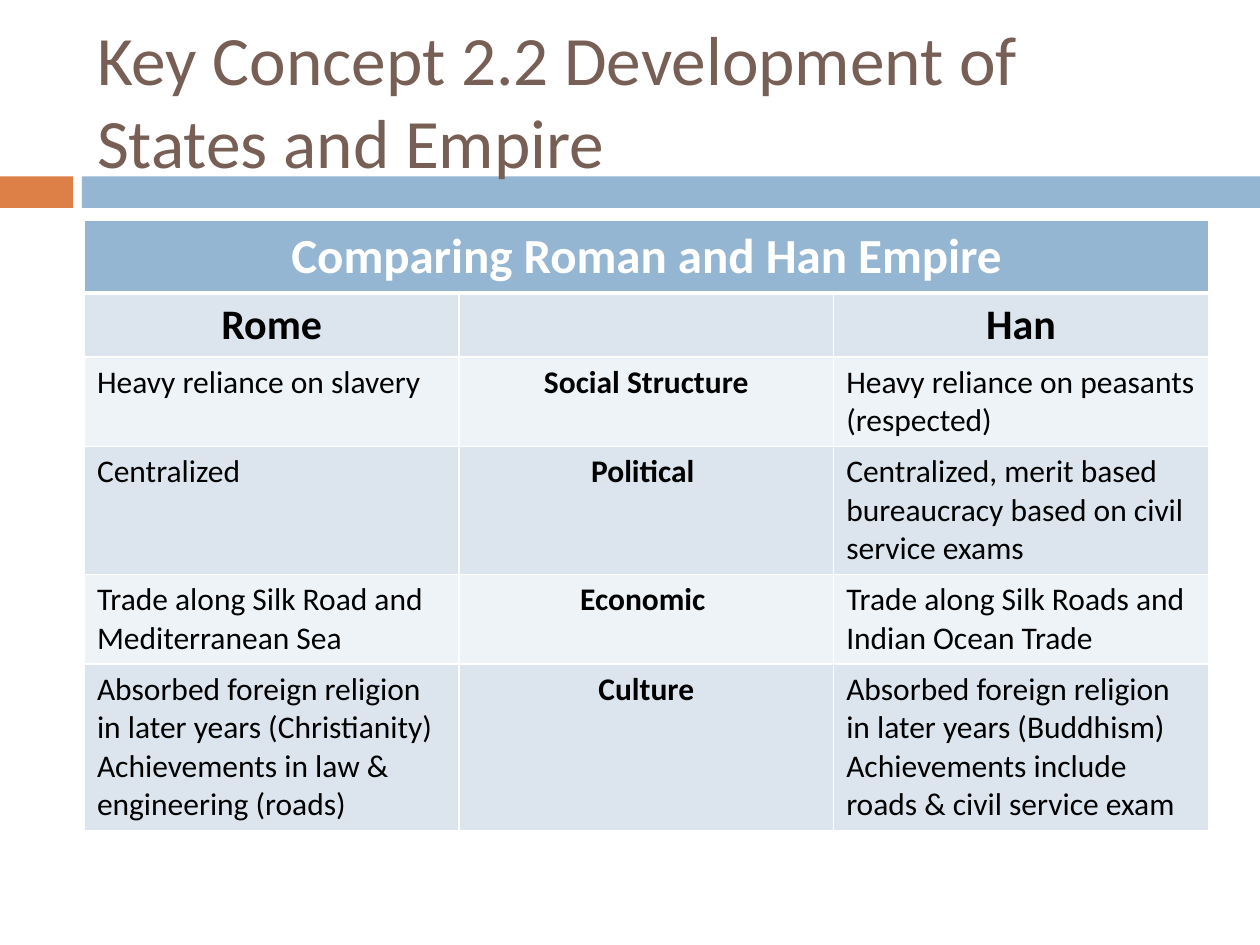
import pptx
import pptx.util
import pptx.dml.color
import pptx.enum.shapes
import pptx.enum.text
import pptx.oxml
import pptx.oxml.ns

Inches, Pt = pptx.util.Inches, pptx.util.Pt
ALIGN = pptx.enum.text.PP_ALIGN

COLORS = {
    "title": "775F55", "orange": "DD8047", "blue": "94B6D2", "white": "FFFFFF",
    "black": "000000", "dark band": "DCE5EE", "light band": "EEF3F7",
}
FONT = "Calibri"
TITLE = "Key Concept 2.2 Development of States and Empire"
BARS = [("orange", 0, 0.58), ("blue", 0.65, 9.35)]
ROWS = [
    ("Comparing Roman and Han Empire", "", ""),
    ("Rome", "", "Han"),
    ("Heavy reliance on slavery", "Social Structure",
     "Heavy reliance on peasants (respected)"),
    ("Centralized", "Political ",
     "Centralized, merit based bureaucracy based on civil service exams"),
    ("Trade along Silk Road and Mediterranean Sea", "Economic ",
     "Trade along Silk Roads and Indian Ocean Trade"),
    ("Absorbed foreign religion in later years (Christianity)\n"
     "Achievements in law & engineering (roads)", "Culture",
     "Absorbed foreign religion in later years (Buddhism)\n"
     "Achievements include roads & civil service exam"),
]
HEADING_SIZES = [28, 24]
BODY_SIZE = 18
LEFT, WIDTH, ROW_HEIGHT = 0.67, 8.92, 0.41


def rgb(name):
    return pptx.dml.color.RGBColor.from_string(COLORS[name])


def format_font(font, size, color, bold):
    font.name, font.size, font.bold = FONT, Pt(size), bold
    font.color.rgb = rgb(color)


def add_bar(slide, color, left, width):
    """Add a bar behind everything already on the slide."""
    bar = slide.shapes.add_shape(pptx.enum.shapes.MSO_SHAPE.RECTANGLE,
                                 Inches(left), Inches(1.4), Inches(width), Inches(0.25))
    bar.shadow.inherit = False
    bar.fill.solid()
    bar.fill.fore_color.rgb = rgb(color)
    bar.line.fill.background()
    slide.shapes._spTree.insert(2, bar._element)


def set_borders(cell, bottom_width):
    """Draw white cell borders; they must come before the fill in the XML."""
    properties = cell._tc.get_or_add_tcPr()
    widths = {"lnL": 1, "lnR": 1, "lnT": 1, "lnB": bottom_width}
    for index, (tag, width) in enumerate(widths.items()):
        properties.insert(index, pptx.oxml.parse_xml(
            f'<a:{tag} {pptx.oxml.ns.nsdecls("a")} w="{Pt(width)}"><a:solidFill>'
            f'<a:srgbClr val="{COLORS["white"]}"/></a:solidFill></a:{tag}>'))


def fill_cell(cell, text, row, column):
    is_heading = row < len(HEADING_SIZES)
    emphasized = is_heading or column == 1
    size = HEADING_SIZES[row] if is_heading else BODY_SIZE
    band = "blue" if row == 0 else "dark band" if row % 2 else "light band"
    cell.fill.solid()
    cell.fill.fore_color.rgb = rgb(band)
    set_borders(cell, 3 if row == 0 else 1)
    cell.text_frame.text = text
    for para in cell.text_frame.paragraphs:
        para.alignment = ALIGN.CENTER if emphasized else ALIGN.LEFT
        for span in para.runs:
            format_font(span.font, size, "white" if row == 0 else "black", emphasized)


def add_comparison(slide):
    frame = slide.shapes.add_table(len(ROWS), 3, Inches(LEFT), Inches(1.75),
                                   Inches(WIDTH), Inches(ROW_HEIGHT * len(ROWS)))
    table = frame.table
    for row, texts in enumerate(ROWS):
        for column, text in enumerate(texts):
            fill_cell(table.cell(row, column), text, row, column)
    table.cell(0, 0).merge(table.cell(0, 2))


def main():
    deck = pptx.Presentation()
    deck.slide_width, deck.slide_height = Inches(10), Inches(7.5)
    slide = deck.slides.add_slide(deck.slide_layouts[5])

    title = slide.shapes.title
    title.left, title.top = Inches(LEFT), Inches(0.25)
    title.width, title.height = Inches(WIDTH), Inches(1.08)
    title.text_frame.text = TITLE
    title.text_frame.auto_size = pptx.enum.text.MSO_AUTO_SIZE.NONE
    title.text_frame.vertical_anchor = pptx.enum.text.MSO_ANCHOR.MIDDLE
    para = title.text_frame.paragraphs[0]
    para.alignment = ALIGN.LEFT
    format_font(para.runs[0].font, 39.6, "title", False)

    for bar in BARS:
        add_bar(slide, *bar)
    add_comparison(slide)
    deck.save("out.pptx")


if __name__ == "__main__":
    main()
